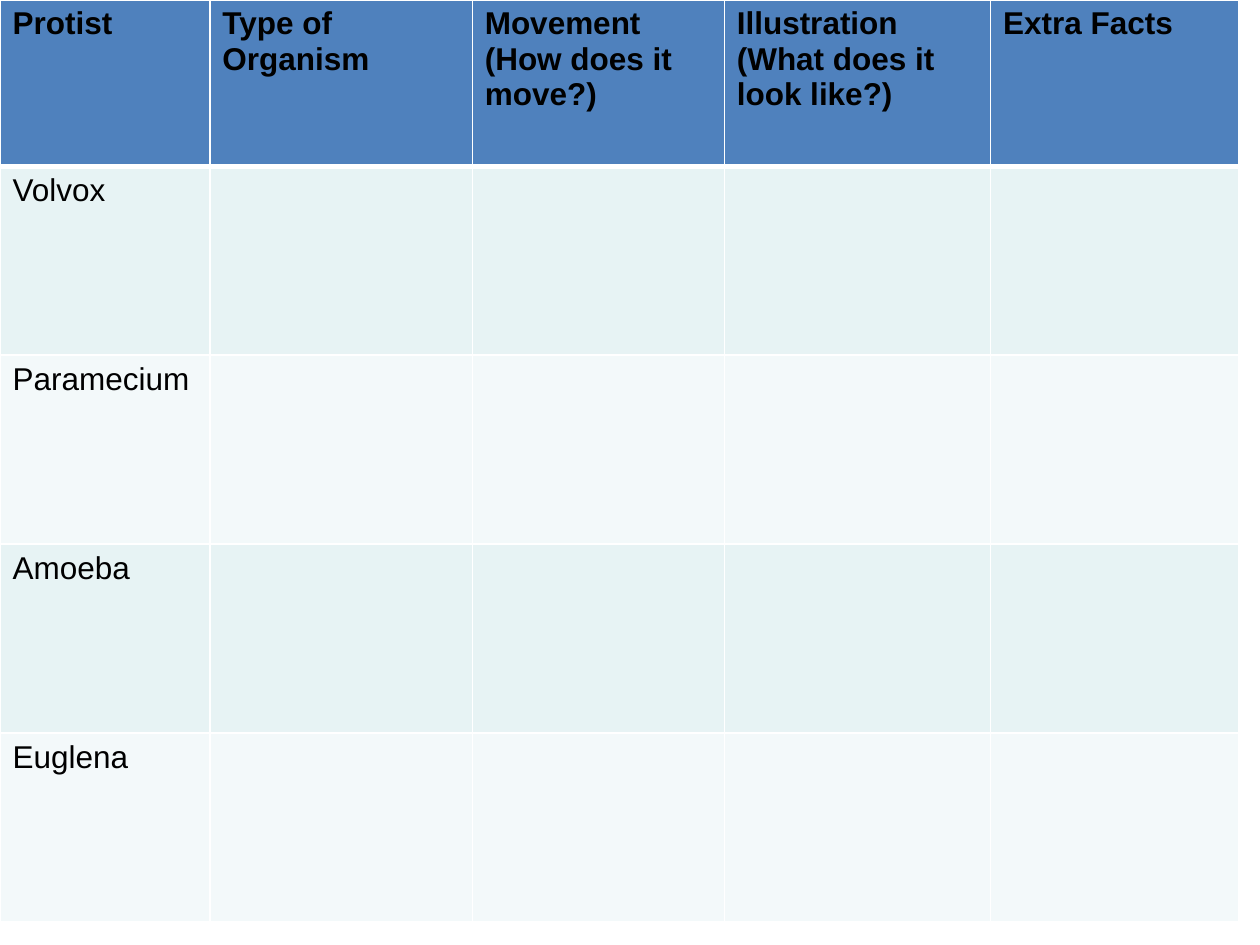
from dataclasses import dataclass

from lxml.etree import SubElement
from pptx import Presentation
from pptx.dml.color import RGBColor
from pptx.oxml.ns import qn
from pptx.util import Cm, Pt

COLUMNS = [
    ("Protist", 4.23),
    ("Type of Organism", 5.29),
    ("Movement (How does it move?)", 5.08),
    ("Illustration (What does it look like?)", 5.37),
    ("Extra Facts", 5.0),
]
PROTISTS = ["Volvox", "Paramecium", "Amoeba", "Euglena"]
HEADER_HEIGHT = 3.35
PROTIST_HEIGHT = 3.81


@dataclass(frozen=True)
class Theme:
    font: str = "Arial"
    size: int = 18
    text: str = "000000"
    header: str = "4F81BD"
    bands: tuple = ("E7F3F4", "F3F9FA")
    border: str = "FFFFFF"
    border_width: int = 1
    header_rule_width: int = 3


THEME = Theme()


def set_borders(cell, top, bottom):
    """Draw the four cell borders; top and bottom are widths in points."""
    properties = cell._tc.get_or_add_tcPr()
    widths = {"L": THEME.border_width, "R": THEME.border_width, "T": top, "B": bottom}
    for side, width in widths.items():
        line = SubElement(properties, qn(f"a:ln{side}"), w=str(Pt(width)))
        fill = SubElement(line, qn("a:solidFill"))
        SubElement(fill, qn("a:srgbClr"), val=THEME.border)


def style_cell(cell, row_index):
    is_header = row_index == 0
    set_borders(
        cell,
        top=THEME.header_rule_width if row_index == 1 else THEME.border_width,
        bottom=THEME.header_rule_width if is_header else THEME.border_width,
    )
    color = THEME.header if is_header else THEME.bands[(row_index - 1) % 2]
    cell.fill.solid()
    cell.fill.fore_color.rgb = RGBColor.from_string(color)
    font = cell.text_frame.paragraphs[0].font
    for run in cell.text_frame.paragraphs[0].runs:
        font = run.font
    font.name = THEME.font
    font.size = Pt(THEME.size)
    font.bold = is_header
    font.color.rgb = RGBColor.from_string(THEME.text)


def add_protist_table(slide):
    headings = [heading for heading, _ in COLUMNS]
    widths = [width for _, width in COLUMNS]
    heights = [HEADER_HEIGHT] + [PROTIST_HEIGHT] * len(PROTISTS)
    table = slide.shapes.add_table(
        len(heights), len(widths), 0, 0, Cm(sum(widths)), Cm(sum(heights))
    ).table
    for column, width in zip(table.columns, widths):
        column.width = Cm(width)
    for row, height in zip(table.rows, heights):
        row.height = Cm(height)
    for column_index, heading in enumerate(headings):
        table.cell(0, column_index).text_frame.text = heading
    for row_index, protist in enumerate(PROTISTS, start=1):
        table.cell(row_index, 0).text_frame.text = protist
    for row_index, row in enumerate(table.rows):
        for cell in row.cells:
            style_cell(cell, row_index)


def main():
    presentation = Presentation()
    presentation.slide_width = Cm(25.4)
    presentation.slide_height = Cm(19.05)
    slide = presentation.slides.add_slide(presentation.slide_layouts[6])
    add_protist_table(slide)
    presentation.save("out.pptx")


if __name__ == "__main__":
    main()
